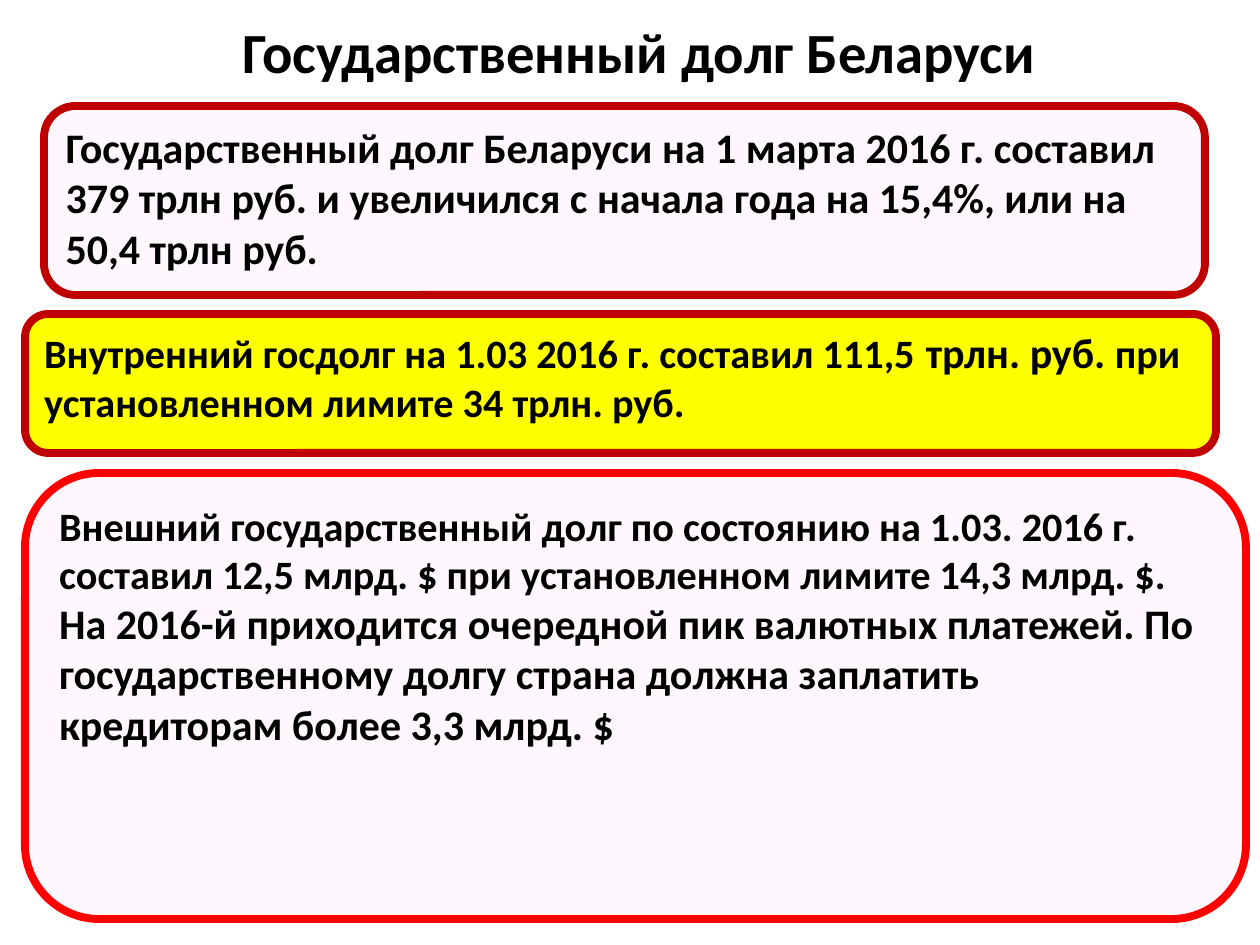
from pptx import Presentation
from pptx.dml.color import RGBColor
from pptx.enum.shapes import MSO_SHAPE as SHAPE
from pptx.enum.text import MSO_ANCHOR as ANCHOR, PP_ALIGN as ALIGN
from pptx.util import Pt

COLORS = {"text": "000000", "pale": "FFF7FE", "yellow": "FFFF00",
          "dark_red": "C00000", "red": "FF0000"}
PX = 914400 / 126


class DebtSlide:
    """Holds the style and the current slide, and draws its elements."""

    font = "Calibri"
    border = Pt(4.5)

    def __init__(self, prs):
        self.s = prs.slides.add_slide(prs.slide_layouts[6])

    def color(self, name):
        return RGBColor.from_string(COLORS[name])

    def emu(self, box):
        return [round(v * PX) for v in box]

    def fill_text(self, tf, paragraphs, align, anchor):
        tf.word_wrap = True
        tf.vertical_anchor = anchor
        for i, (size, runs) in enumerate(paragraphs):
            p = tf.add_paragraph() if i else tf.paragraphs[0]
            p.alignment = align
            p.font.name, p.font.bold, p.font.size = self.font, True, Pt(size)
            p.font.color.rgb = self.color("text")
            for text, run_size in runs:
                r = p.add_run()
                r.text = text
                if run_size != size:
                    r.font.size = Pt(run_size)

    def title(self, box, text, size):
        sp = self.s.shapes.add_textbox(*self.emu(box))
        self.fill_text(sp.text_frame, [(size, [(text, size)])], ALIGN.CENTER, ANCHOR.MIDDLE)

    def panel(self, box, fill, line, paragraphs):
        sp = self.s.shapes.add_shape(SHAPE.ROUNDED_RECTANGLE, *self.emu(box))
        sp.shadow.inherit = False
        sp.fill.solid()
        sp.fill.fore_color.rgb = self.color(fill)
        sp.line.color.rgb = self.color(line)
        sp.line.width = self.border
        self.fill_text(sp.text_frame, paragraphs, ALIGN.LEFT, ANCHOR.TOP)


def main():
    prs = Presentation()
    prs.slide_width, prs.slide_height = round(1260 * PX), round(945 * PX)
    slide = DebtSlide(prs)
    slide.title((34, 16, 1211, 69), "Государственный долг Беларуси", 32.4)
    slide.panel((44, 106, 1161, 189), "pale", "dark_red", [
        (24, [("Государственный долг Беларуси на 1 марта 2016 г. составил "
               "379 трлн руб. и увеличился с начала года на 15,4%, или "
               "на 50,4 трлн руб.", 24)])])
    slide.panel((25, 314, 1191, 139), "yellow", "dark_red", [
        (23, [("Внутренний госдолг на 1.03 2016 г. составил 111,5 ", 23),
              ("трлн. руб. ", 24),
              ("при установленном лимите 34 трлн. руб.", 23)])])
    slide.panel((25, 473, 1221, 446), "pale", "red", [
        (23, [("Внешний государственный долг по состоянию на 1.03. 2016 г. "
               "составил 12,5 млрд. $ при установленном лимите 14,3 млрд. $.", 23)]),
        (24, [("На 2016-й приходится очередной пик валютных платежей. По "
               "государственному долгу страна должна заплатить "
               "кредиторам более 3,3 млрд. $", 24)])])
    prs.save("out.pptx")


if __name__ == "__main__":
    main()
